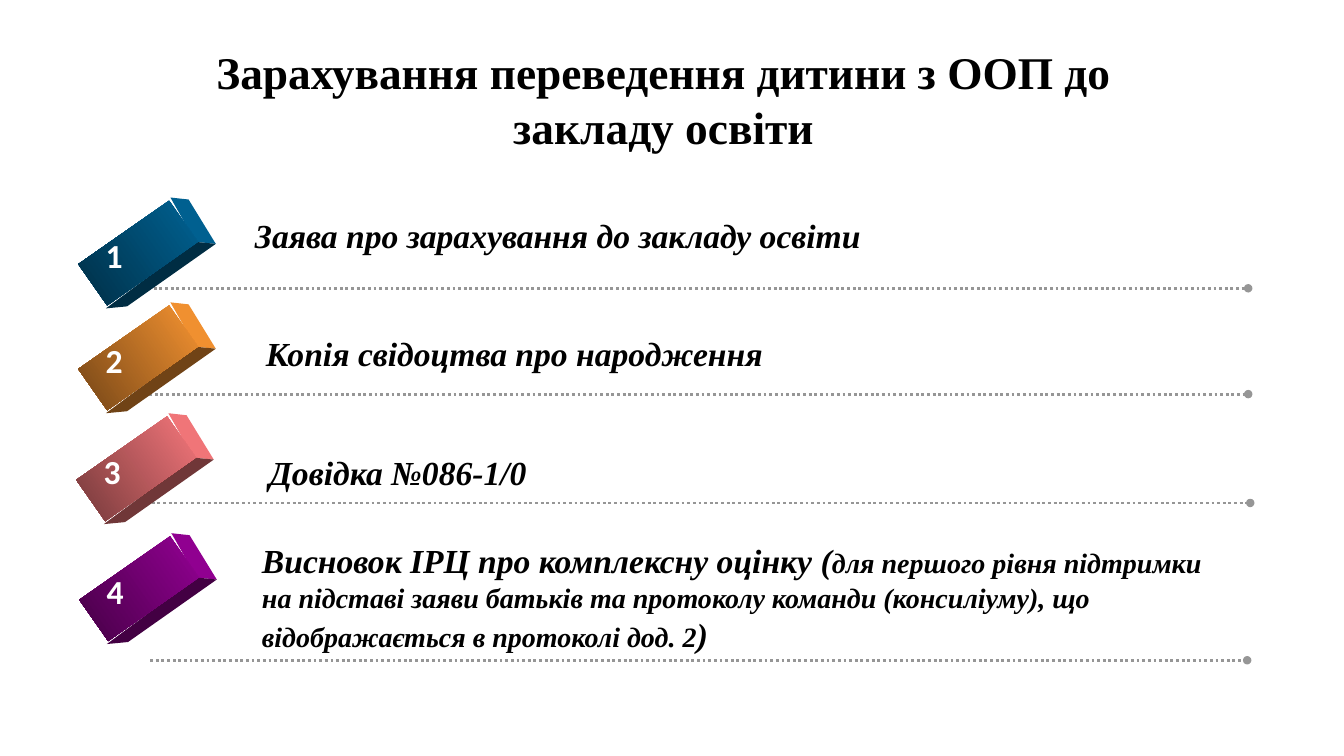
from lxml.etree import SubElement
from pptx import Presentation
from pptx.dml.color import RGBColor
from pptx.enum.dml import MSO_LINE
from pptx.enum.shapes import MSO_CONNECTOR as CONN, MSO_SHAPE as SHAPE
from pptx.enum.text import MSO_ANCHOR as ANCHOR, MSO_AUTO_SIZE as AUTO, PP_ALIGN as ALIGN
from pptx.oxml.ns import qn
from pptx.util import Inches, Pt

BLACK = RGBColor(0x00, 0x00, 0x00)
WHITE = RGBColor(0xFF, 0xFF, 0xFF)
GRAY = RGBColor(0x96, 0x96, 0x96)
BLUE = RGBColor(0x00, 0x66, 0x99)
ORANGE = RGBColor(0xFF, 0x99, 0x33)
PINK = RGBColor(0xFF, 0x7C, 0x80)
PURPLE = RGBColor(0x99, 0x00, 0x99)

SERIF = "Times New Roman"
END = [(0.32, -0.55), (0.5, -0.53), (0.77, -0.09), (0.57, -0.11)]
BASE = [(-0.32, 0.55), (0.57, -0.11), (0.77, -0.09), (-0.11, 0.53)]

ROWS = [
    (BLUE, (1.37, 2.51), (1.47, 12.38, 2.86), (2.43, 2.08, 9.69, 0.5),
     [("Заява про зарахування до закладу освіти", 24)]),
    (ORANGE, (1.37, 3.55), (1.48, 12.38, 3.91), (2.54, 3.25, 9.76, 0.5),
     [("Копія свідоцтва про народження", 24)]),
    (PINK, (1.35, 4.65), (1.45, 12.4, 4.99), (2.57, 4.43, 9.77, 0.5),
     [("Довідка №086-1/0", 24)]),
    (PURPLE, (1.38, 5.84), (1.49, 12.37, 6.55), (2.5, 5.31, 9.83, 1.24),
     [("Висновок ІРЦ про комплексну оцінку (", 24),
      ("для першого рівня підтримки на підставі заяви батьків та протоколу "
       "команди (консиліуму), що відображається в протоколі дод. 2", 20),
      (")", 24)]),
]


def shade(color, part):
    """Return the colour darkened to the given part of its brightness."""
    return RGBColor(*(round(value * part) for value in color))


def write(para, text, size, font=SERIF, color=BLACK, bold=True, italic=False):
    """Add a formatted run to a paragraph."""
    run = para.add_run()
    run.text = text
    run.font.name, run.font.size = font, Pt(size)
    run.font.bold, run.font.italic = bold, italic
    run.font.color.rgb = color


def label(shapes, box, runs, wrap=True, **style):
    """Add a text box holding one paragraph of (text, size) runs."""
    frame = shapes.add_textbox(*map(Inches, box)).text_frame
    frame.word_wrap = wrap
    frame.auto_size = AUTO.SHAPE_TO_FIT_TEXT
    for text, size in runs:
        write(frame.paragraphs[0], text, size, **style)


def rule(shapes, left, right, top):
    """Draw a dotted line with a round end."""
    line = shapes.add_connector(
        CONN.STRAIGHT, Inches(left), Inches(top), Inches(right), Inches(top))
    line.line.color.rgb = GRAY
    line.line.width = Pt(2)
    line.line.dash_style = MSO_LINE.ROUND_DOT
    props = line._element.spPr
    SubElement(props.find(qn("a:ln")), qn("a:tailEnd"), type="oval")
    SubElement(props, qn("a:effectLst"))


def side(shapes, mid, points, color):
    """Draw one flat side of a block around its middle."""
    spots = [(Inches(mid[0] + x), Inches(mid[1] + y)) for x, y in points]
    path = shapes.build_freeform(*spots[0])
    path.add_line_segments(spots[1:], close=True)
    shape = path.convert_to_shape()
    shape.shadow.inherit = False
    shape.fill.solid()
    shape.fill.fore_color.rgb = color
    shape.line.fill.background()


def block(shapes, mid, color, number):
    """Draw a tilted solid block with its number."""
    x, y = mid
    side(shapes, mid, END, shade(color, 0.94))
    side(shapes, mid, BASE, shade(color, 0.44))
    wide, high = 0.5, 1.1
    face = shapes.add_shape(SHAPE.RECTANGLE, Inches(x - wide / 2),
                            Inches(y - high / 2), Inches(wide), Inches(high))
    face.rotation = 55
    face.shadow.inherit = False
    face.line.fill.background()
    face.fill.gradient()
    face.fill.gradient_angle = 270
    for stop, part in zip(face.fill.gradient_stops, (0.96, 0.46)):
        stop.color.rgb = shade(color, part)
    label(shapes, (x - 0.42, y - 0.23, 0.37, 0.51), [(str(number), 24)],
          wrap=False, font="Calibri", color=WHITE)


def row(slide, number, color, mid, ends, box, runs):
    """Build one numbered row as a group."""
    shapes = slide.shapes.add_group_shape().shapes
    rule(shapes, *ends)
    block(shapes, mid, color, number)
    label(shapes, box, runs, italic=True)


def head(slide, box, text):
    """Place and format the slide title."""
    title = slide.shapes.title
    title.left, title.top, title.width, title.height = map(Inches, box)
    frame = title.text_frame
    frame.word_wrap = True
    frame.auto_size = AUTO.NONE
    frame.vertical_anchor = ANCHOR.MIDDLE
    para = frame.paragraphs[0]
    para.alignment = ALIGN.CENTER
    write(para, text, 32.4)


def main():
    """Build the slide and save it."""
    deck = Presentation()
    deck.slide_width, deck.slide_height = Inches(13.33), Inches(7.5)
    slide = deck.slides.add_slide(deck.slide_layouts[5])
    head(slide, (1.71, 0.39, 9.74, 1.18),
         "Зарахування переведення дитини з ООП до закладу освіти")
    for number, parts in enumerate(ROWS, 1):
        row(slide, number, *parts)
    deck.save("out.pptx")


if __name__ == "__main__":
    main()
